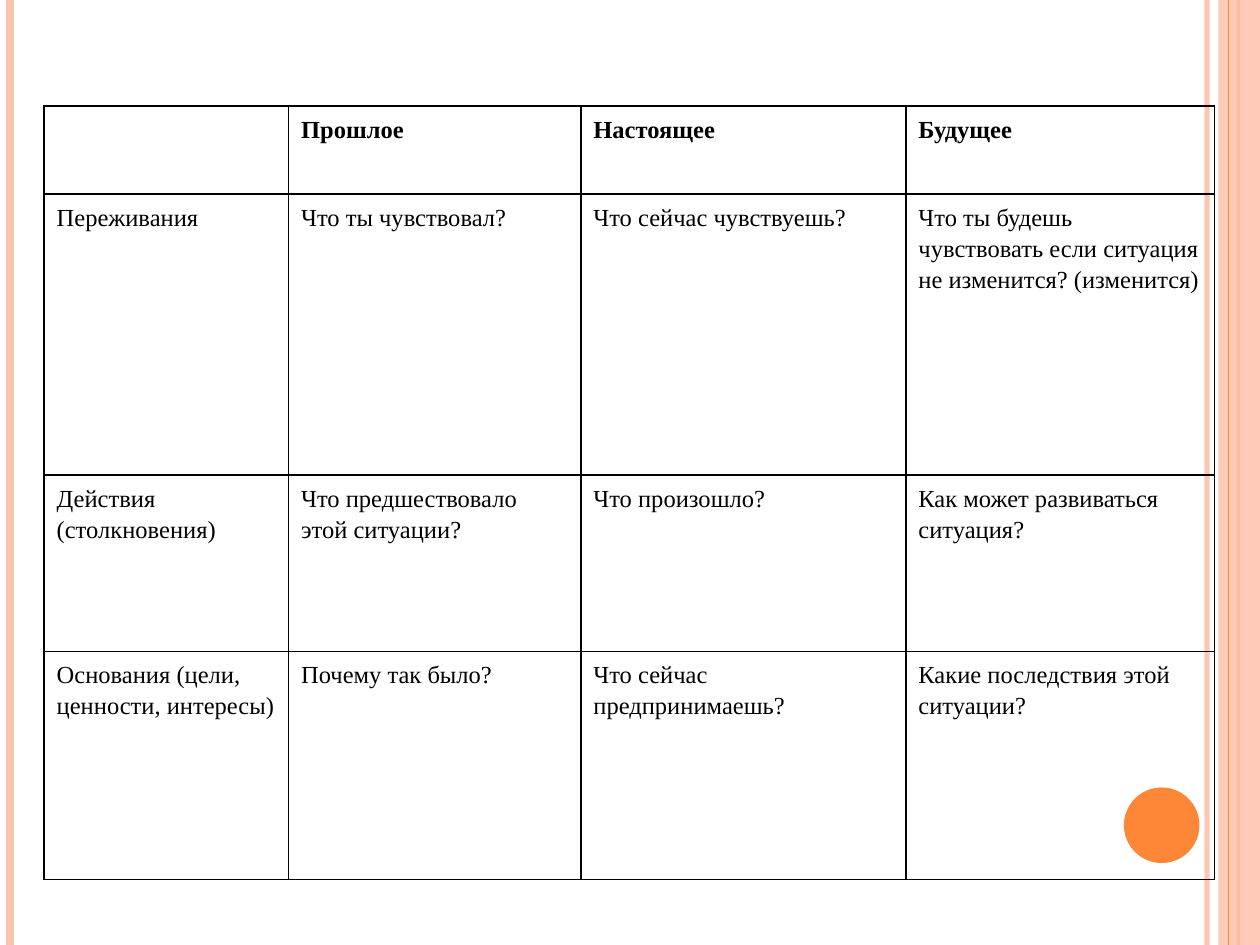
from lxml.etree import SubElement
from pptx import Presentation
from pptx.dml.color import RGBColor
from pptx.enum.shapes import MSO_CONNECTOR as Link, MSO_SHAPE as Shape
from pptx.oxml.ns import qn
from pptx.util import Inches, Pt

COLORS = {"peach": "FEC3AE", "orange": "FE8637", "ink": "000000"}
FONT = "Times New Roman"
HEIGHT = 7.5

# x, colour, width in points, opacity in percent
BACK_LINES = [
    (9.58, "peach", 3, 93),
    (0.08, "peach", 4.5, 100),
    (9.83, "orange", 1.5, 100),
]
FRONT_LINES = [(9.75, "orange", 0.75, 100)]

COLS = [1.94, 2.32, 2.58, 2.45]
ROWS = [0.7, 2.23, 1.4, 1.81]
CELLS = [
    ["", "Прошлое", "Настоящее", "Будущее"],
    ["Переживания", "Что ты чувствовал?", "Что сейчас чувствуешь?",
     "Что ты будешь чувствовать если ситуация не изменится? (изменится)"],
    ["Действия (столкновения)", "Что предшествовало этой ситуации?",
     "Что произошло?", "Как может развиваться ситуация?"],
    ["Основания (цели, ценности, интересы)", "Почему так было?",
     "Что сейчас предпринимаешь?", "Какие последствия этой ситуации?"],
]


def paint(fill, color, alpha=100):
    fill.solid()
    fill.fore_color.rgb = RGBColor.from_string(COLORS[color])
    if alpha < 100:
        node = fill._xPr.find(qn("a:solidFill"))[0]
        SubElement(node, qn("a:alpha"), val=str(alpha * 1000))


def add_stripe(slide, x, color, width, alpha):
    """Draw a vertical line over the full slide height."""
    line = slide.shapes.add_connector(
        Link.STRAIGHT, Inches(x), 0, Inches(x), Inches(HEIGHT))
    line.line.width = Pt(width)
    paint(line.line.fill, color, alpha)
    SubElement(line._element.spPr, qn("a:effectLst"))


def add_plain(slide, kind, box, color, alpha=100):
    shape = slide.shapes.add_shape(kind, *map(Inches, box))
    shape.shadow.inherit = False
    shape.line.fill.background()
    paint(shape.fill, color, alpha)


def add_borders(cell):
    props = cell._tc.get_or_add_tcPr()
    for i, side in enumerate(("lnL", "lnR", "lnT", "lnB")):
        edge = props.makeelement(qn("a:" + side), {"w": str(Pt(1))})
        fill = SubElement(edge, qn("a:solidFill"))
        SubElement(fill, qn("a:srgbClr"), val=COLORS["ink"])
        props.insert(i, edge)


def fill_cell(cell, text, bold):
    cell.fill.background()
    add_borders(cell)
    cell.text_frame.text = text
    para = cell.text_frame.paragraphs[0]
    para.line_spacing = 1.15
    for run in para.runs:
        font = run.font
        font.name, font.size, font.bold = FONT, Pt(14), bold
        font.color.rgb = RGBColor.from_string(COLORS["ink"])


def add_grid(slide):
    box = (0.35, 0.84, sum(COLS), sum(ROWS))
    table = slide.shapes.add_table(
        len(ROWS), len(COLS), *map(Inches, box)).table
    table.first_row = table.horz_banding = False
    for col, width in zip(table.columns, COLS):
        col.width = Inches(width)
    for r, (row, height) in enumerate(zip(table.rows, ROWS)):
        row.height = Inches(height)
        for cell, text in zip(row.cells, CELLS[r]):
            fill_cell(cell, text, bold=r == 0)


def main():
    deck = Presentation()
    deck.slide_width, deck.slide_height = Inches(10), Inches(HEIGHT)
    slide = deck.slides.add_slide(deck.slide_layouts[6])
    for stripe in BACK_LINES:
        add_stripe(slide, *stripe)
    add_plain(slide, Shape.RECTANGLE, (9.67, 0, 0.33, HEIGHT), "peach", 87)
    for stripe in FRONT_LINES:
        add_stripe(slide, *stripe)
    add_plain(slide, Shape.OVAL, (8.92, 6.25, 0.6, 0.6), "orange")
    add_grid(slide)
    deck.save("out.pptx")


if __name__ == "__main__":
    main()
